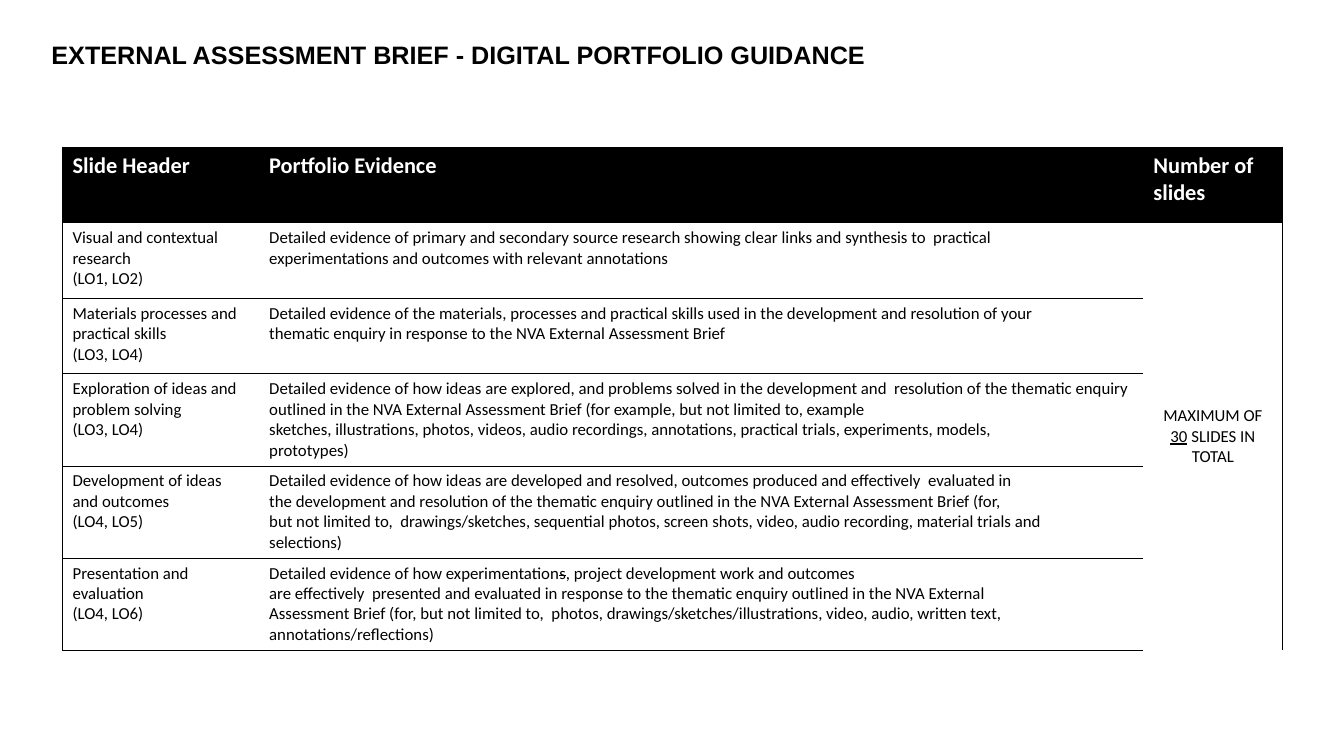
import dataclasses

import pptx
import pptx.dml.color
import pptx.enum.text
import pptx.oxml
import pptx.oxml.ns
import pptx.util
from pptx.util import Inches


@dataclasses.dataclass(frozen=True)
class Theme:
    """Colours, fonts and type sizes of the slide."""
    ink: str = "000000"
    paper: str = "FFFFFF"
    title_font: str = "Arial"
    table_font: str = "Calibri"
    title_size: int = 18
    header_size: int = 16
    body_size: int = 12
    rule_width: float = 0.75


THEME = Theme()
TITLE = "EXTERNAL ASSESSMENT BRIEF - DIGITAL PORTFOLIO GUIDANCE"
COLUMN_WIDTHS = (1.95, 8.77, 1.38)
ROW_HEIGHT = 0.75
HEADINGS = ("Slide Header", "Portfolio Evidence", "Number of slides")
SLIDE_LIMIT = ("MAXIMUM OF", (("30", "underline"), (" SLIDES IN TOTAL", "")))
EVIDENCE_ROWS = (
    (("Visual and contextual", "research", "(LO1, LO2)"),
     ("Detailed evidence of primary and secondary source research showing clear "
      "links and synthesis to  practical",
      "experimentations and outcomes with relevant annotations")),
    (("Materials processes and practical skills", "(LO3, LO4)"),
     ("Detailed evidence of the materials, processes and practical skills used in "
      "the development and resolution of your",
      "thematic enquiry in response to the NVA External Assessment Brief")),
    (("Exploration of ideas and", "problem solving", "(LO3, LO4)"),
     ("Detailed evidence of how ideas are explored, and problems solved in the "
      "development and  resolution of the thematic enquiry outlined in the NVA "
      "External Assessment Brief (for example, but not limited to, example\v"
      "sketches, illustrations, photos, videos, audio recordings, annotations, "
      "practical trials, experiments, models,",
      "prototypes)")),
    (("Development of ideas and outcomes", "(LO4, LO5)"),
     ("Detailed evidence of how ideas are developed and resolved, outcomes produced "
      "and effectively  evaluated in\vthe development and resolution of the thematic "
      "enquiry outlined in the NVA External Assessment Brief (for,",
      "but not limited to,  drawings/sketches, sequential photos, screen shots, "
      "video, audio recording, material trials and",
      "selections)")),
    (("Presentation and evaluation", "(LO4, LO6)"),
     ((("Detailed evidence of how experimentation", ""), ("s", "strike"),
       (", project development work and outcomes\vare effectively  presented and "
        "evaluated in response to the thematic enquiry outlined in the NVA External",
        "")),
      "Assessment Brief (for, but not limited to,  photos, "
      "drawings/sketches/illustrations, video, audio, written text,",
      "annotations/reflections)")),
)


def rgb(colour):
    """Turn a hex string into a colour value."""
    return pptx.dml.color.RGBColor.from_string(colour)


def format_font(font, name, size, colour, bold=False):
    """Set the typeface, size, colour and weight of a font."""
    font.name = name
    font.size = pptx.util.Pt(size)
    font.color.rgb = rgb(colour)
    font.bold = bold


def add_styled_runs(paragraph, pieces):
    """Add text pieces, underlining or striking those that say so."""
    for wording, style in pieces:
        for position, line in enumerate(wording.split("\v")):
            if position:
                paragraph.add_line_break()
            run = paragraph.add_run()
            run.text = line
            if style == "underline":
                run.font.underline = True
            elif style == "strike":
                run._r.get_or_add_rPr().set("strike", "sngStrike")


def set_borders(cell, ruled_sides):
    """Rule the named sides of a cell and clear the others."""
    properties = cell._tc.get_or_add_tcPr()
    namespace = pptx.oxml.ns.nsdecls("a")
    width = pptx.util.Pt(THEME.rule_width)
    for side in "LRTB":
        line = (f'<a:solidFill><a:srgbClr val="{THEME.ink}"/></a:solidFill>'
                if side in ruled_sides else "<a:noFill/>")
        properties.append(pptx.oxml.parse_xml(
            f'<a:ln{side} {namespace} w="{width}">{line}</a:ln{side}>'))


def fill_cell(cell, lines, size, colour, bold=False, centred=False):
    """Write one paragraph per line into a cell."""
    frame = cell.text_frame
    for index, line in enumerate(lines):
        paragraph = frame.add_paragraph() if index else frame.paragraphs[0]
        add_styled_runs(paragraph, ((line, ""),) if isinstance(line, str) else line)
        format_font(paragraph.font, THEME.table_font, size, colour, bold)
        if centred:
            paragraph.alignment = pptx.enum.text.PP_ALIGN.CENTER
    if centred:
        cell.vertical_anchor = pptx.enum.text.MSO_ANCHOR.MIDDLE


def set_title(slide):
    """Place and format the slide title."""
    title = slide.shapes.title
    title.left, title.top = Inches(0.51), Inches(0.38)
    title.width, title.height = Inches(8.09), Inches(0.33)
    frame = title.text_frame
    frame.text = TITLE
    frame.margin_left = frame.margin_right = frame.margin_bottom = 0
    frame.margin_top = Inches(0.01)
    frame.vertical_anchor = pptx.enum.text.MSO_ANCHOR.TOP
    frame.word_wrap = True
    heading = frame.paragraphs[0]
    heading.alignment = pptx.enum.text.PP_ALIGN.LEFT
    heading.space_before = pptx.util.Pt(1)
    format_font(heading.font, THEME.title_font, THEME.title_size, THEME.ink, True)


def add_evidence_table(slide):
    """Add the table of portfolio evidence."""
    row_count = len(EVIDENCE_ROWS) + 1
    table = slide.shapes.add_table(
        row_count, len(HEADINGS), Inches(0.62), Inches(1.46),
        Inches(sum(COLUMN_WIDTHS)), Inches(ROW_HEIGHT * row_count)).table
    table.horz_banding = False
    for column, width in zip(table.columns, COLUMN_WIDTHS):
        column.width = Inches(width)
    for row_index, row in enumerate(table.rows):
        row.height = Inches(ROW_HEIGHT)
        for cell, sides in zip(row.cells, ("LTB", "TB", "R")):
            if sides == "R":
                sides += "T" if row_index < 2 else ""
                sides += "B" if row_index in (0, row_count - 1) else ""
            set_borders(cell, sides)
            cell.fill.solid()
            cell.fill.fore_color.rgb = rgb(THEME.paper if row_index else THEME.ink)
    for cell, heading in zip(table.rows[0].cells, HEADINGS):
        fill_cell(cell, (heading,), THEME.header_size, THEME.paper, bold=True)
    for row_index, contents in enumerate(EVIDENCE_ROWS, 1):
        for column_index, lines in enumerate(contents):
            fill_cell(table.cell(row_index, column_index), lines,
                      THEME.body_size, THEME.ink)
    limit = table.cell(1, 2)
    limit.merge(table.cell(row_count - 1, 2))
    fill_cell(limit, SLIDE_LIMIT, THEME.body_size, THEME.ink, centred=True)


def main():
    """Build the slide and save it."""
    presentation = pptx.Presentation()
    presentation.slide_width = Inches(13.33)
    presentation.slide_height = Inches(7.5)
    slide = presentation.slides.add_slide(presentation.slide_layouts[5])
    set_title(slide)
    add_evidence_table(slide)
    presentation.save("out.pptx")


if __name__ == "__main__":
    main()
